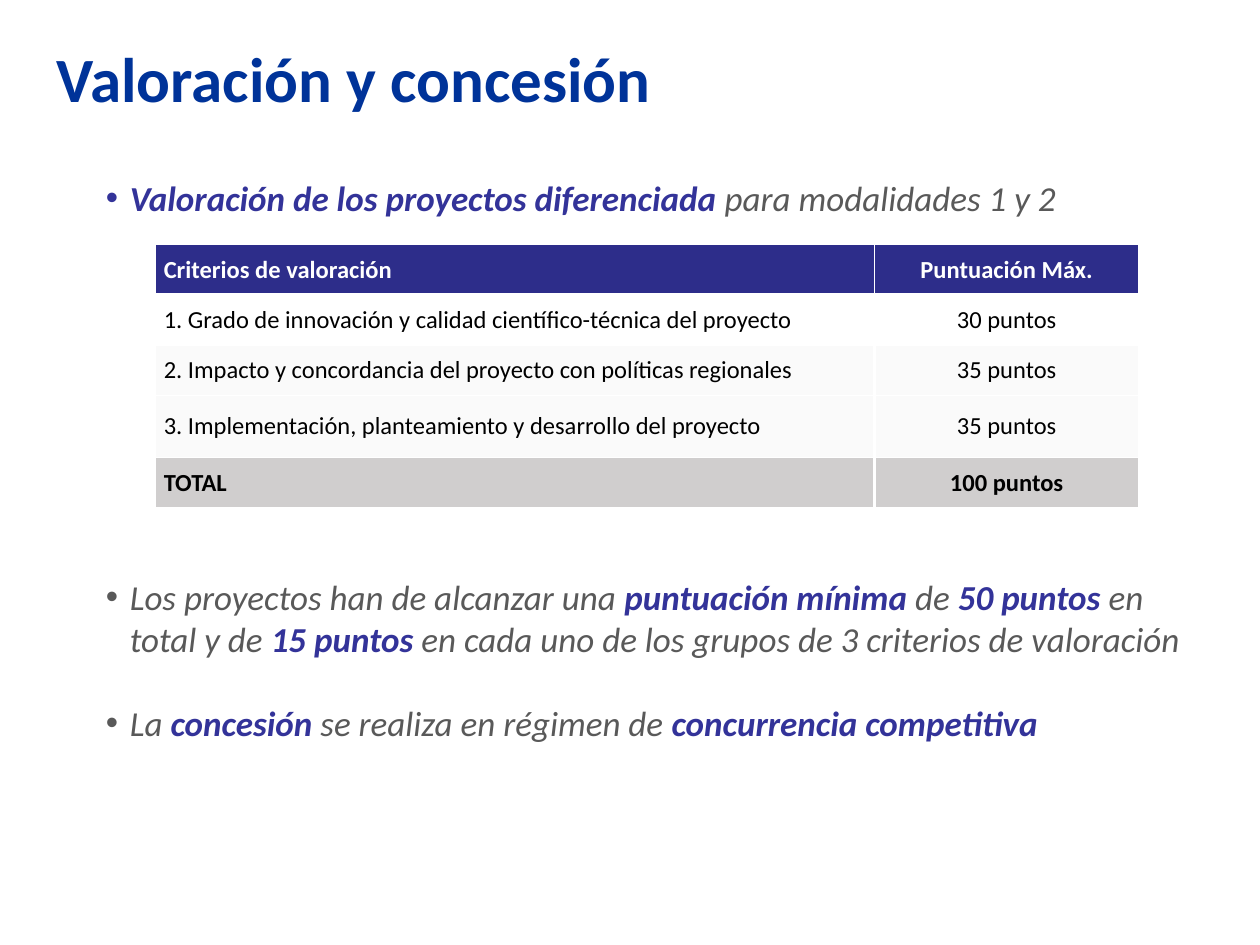
import pptx
import pptx.dml.color
import pptx.enum.text
import pptx.oxml
import pptx.oxml.ns
import pptx.util
from pptx.util import Inches, Pt

FONT = "Calibri"
COLORS = {
    "title": "003399",
    "emphasis": "333399",
    "body": "595959",
    "header": "2D2D8A",
    "band": "FAFAFA",
    "total": "D0CECE",
    "white": "FFFFFF",
    "black": "000000",
}

TABLE_GAP = 192  # points left between the first two bullets for the table

# Each bullet: space before in points, then (text, emphasised) runs
BULLETS = [
    (0, [("Valoración de los proyectos diferenciada ", True),
         ("para modalidades 1 y 2", False)]),
    (TABLE_GAP, [("Los proyectos han de alcanzar una ", False),
                 ("puntuación mínima ", True),
                 ("de ", False),
                 ("50 puntos ", True),
                 ("en total y de ", False),
                 ("15 puntos ", True),
                 ("en cada uno de los grupos de 3 criterios de valoración", False)]),
    (12, [("La ", False),
          ("concesión ", True),
          ("se realiza en régimen de ", False),
          ("concurrencia competitiva", True)]),
]

# Each row: texts, height, fill, text colour, bold
ROWS = [
    (("Criterios de valoración", "Puntuación Máx."), 0.4, "header", "white", True),
    (("1. Grado de innovación y calidad científico-técnica del proyecto", "30 puntos"),
     0.4, None, "black", False),
    (("2. Impacto y concordancia del proyecto con políticas regionales", "35 puntos"),
     0.4, "band", "black", False),
    (("3. Implementación, planteamiento y desarrollo del proyecto", "35 puntos"),
     0.49, "band", "black", False),
    (("TOTAL", "100 puntos"), 0.4, "total", "black", True),
]
COLUMN_WIDTHS = (5.71, 2.1)
ALIGNMENTS = (pptx.enum.text.PP_ALIGN.LEFT, pptx.enum.text.PP_ALIGN.CENTER)


def rgb(name):
    return pptx.dml.color.RGBColor.from_string(COLORS[name])


def place(shape, left, top, width, height):
    shape.left, shape.top = Inches(left), Inches(top)
    shape.width, shape.height = Inches(width), Inches(height)
    frame = shape.text_frame
    frame.word_wrap = True
    frame.auto_size = pptx.enum.text.MSO_AUTO_SIZE.NONE
    frame.vertical_anchor = pptx.enum.text.MSO_ANCHOR.TOP


def set_font(font, size, color, bold):
    font.name = FONT
    font.size = Pt(size)
    font.bold = bold
    font.color.rgb = rgb(color)


def fill_title(shape):
    place(shape, 0.35, 0.33, 9.41, 0.78)
    paragraph = shape.text_frame.paragraphs[0]
    paragraph.text = "Valoración y concesión"
    paragraph.alignment = pptx.enum.text.PP_ALIGN.LEFT
    paragraph.line_spacing = 0.9
    set_font(paragraph.font, 36, "title", True)


def add_bullet(paragraph):
    properties = paragraph._p.get_or_add_pPr()
    properties.set("marL", str(Inches(0.19)))
    properties.set("indent", str(-Inches(0.19)))
    bullet = pptx.oxml.parse_xml(
        f'<a:buChar {pptx.oxml.ns.nsdecls("a")} char="•"/>')
    properties.append(bullet)


def fill_body(shape):
    place(shape, 0.74, 1.35, 8.91, 4.53)
    frame = shape.text_frame
    for index, (space_before, runs) in enumerate(BULLETS):
        paragraph = frame.add_paragraph() if index else frame.paragraphs[0]
        add_bullet(paragraph)
        paragraph.line_spacing = 1.0
        paragraph.space_before = Pt(space_before)
        paragraph.space_after = Pt(12)
        paragraph.font.name = FONT
        paragraph.font.size = Pt(20)
        paragraph.font.italic = True
        for text, emphasised in runs:
            run = paragraph.add_run()
            run.text = text
            run.font.bold = emphasised
            run.font.color.rgb = rgb("emphasis" if emphasised else "body")


def set_border(cell, side, width):
    line = pptx.oxml.parse_xml(
        f'<a:{side} {pptx.oxml.ns.nsdecls("a")} w="{Pt(width)}"><a:solidFill>'
        f'<a:srgbClr val="{COLORS["white"]}"/></a:solidFill></a:{side}>')
    cell._tc.get_or_add_tcPr().append(line)


def fill_cell(cell, text, alignment, fill, color, bold):
    cell.vertical_anchor = pptx.enum.text.MSO_ANCHOR.MIDDLE
    cell.margin_left = cell.margin_right = Inches(0.07)
    cell.margin_top = cell.margin_bottom = 0
    paragraph = cell.text_frame.paragraphs[0]
    paragraph.text = text
    paragraph.alignment = alignment
    paragraph.space_before = paragraph.space_after = Pt(2)
    set_font(paragraph.font, 14, color, bold)
    if fill:
        cell.fill.solid()
        cell.fill.fore_color.rgb = rgb(fill)
    else:
        cell.fill.background()


def add_criteria_table(slide):
    table = slide.shapes.add_table(
        len(ROWS), len(COLUMN_WIDTHS), Inches(1.23), Inches(1.94),
        Inches(sum(COLUMN_WIDTHS)), Inches(sum(row[1] for row in ROWS))).table
    for column, width in zip(table.columns, COLUMN_WIDTHS):
        column.width = Inches(width)

    # Horizontal rules above and below each row
    rules = [None, 2.25, 1.5, 1, 1, None]
    for row_index, (texts, height, fill, color, bold) in enumerate(ROWS):
        table.rows[row_index].height = Inches(height)
        divider = 1.5 if row_index else 1
        for column_index, text in enumerate(texts):
            cell = table.cell(row_index, column_index)
            sides = (("lnL", divider if column_index else None),
                     ("lnR", None if column_index else divider),
                     ("lnT", rules[row_index]),
                     ("lnB", rules[row_index + 1]))
            for side, width in sides:
                if width:
                    set_border(cell, side, width)
            fill_cell(cell, text, ALIGNMENTS[column_index], fill, color, bold)


def main():
    presentation = pptx.Presentation()
    presentation.slide_width = Inches(10)
    presentation.slide_height = Inches(7.5)
    slide = presentation.slides.add_slide(presentation.slide_layouts[1])
    fill_title(slide.shapes.title)
    fill_body(slide.placeholders[1])
    add_criteria_table(slide)
    presentation.save("out.pptx")


if __name__ == "__main__":
    main()
